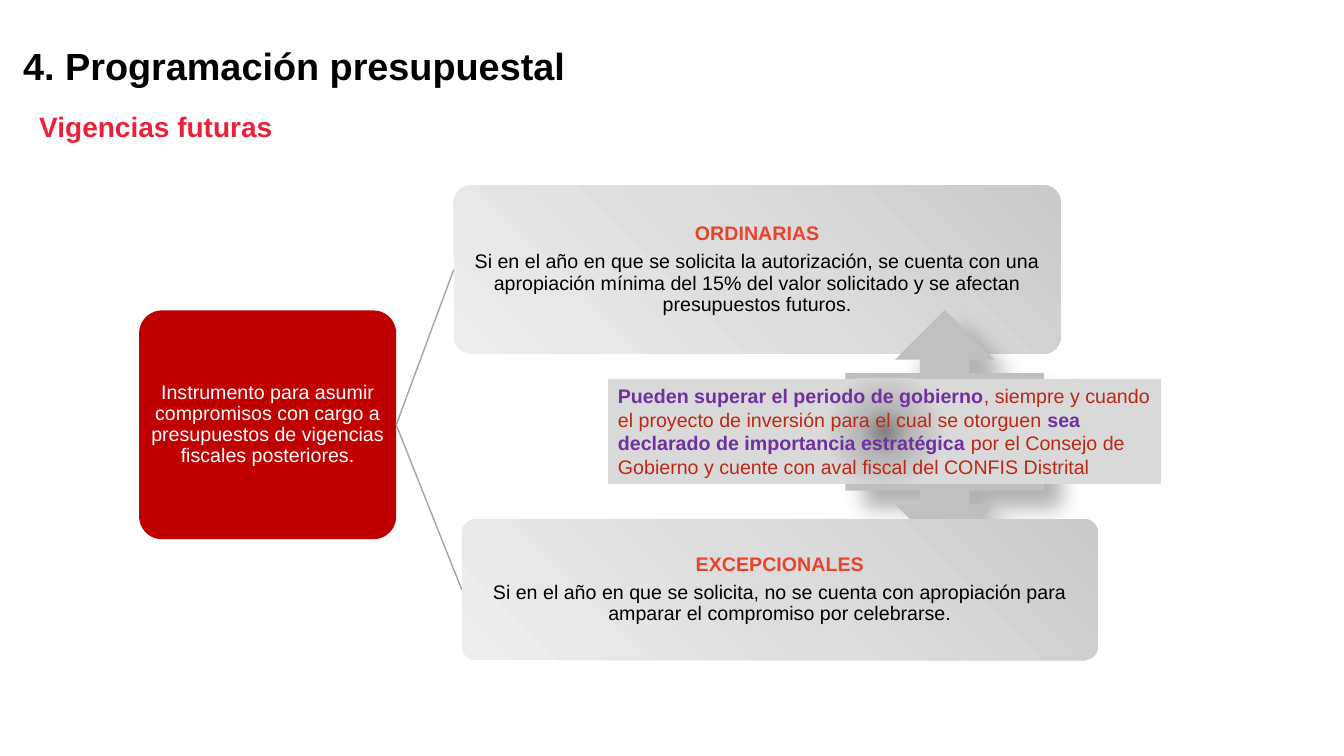
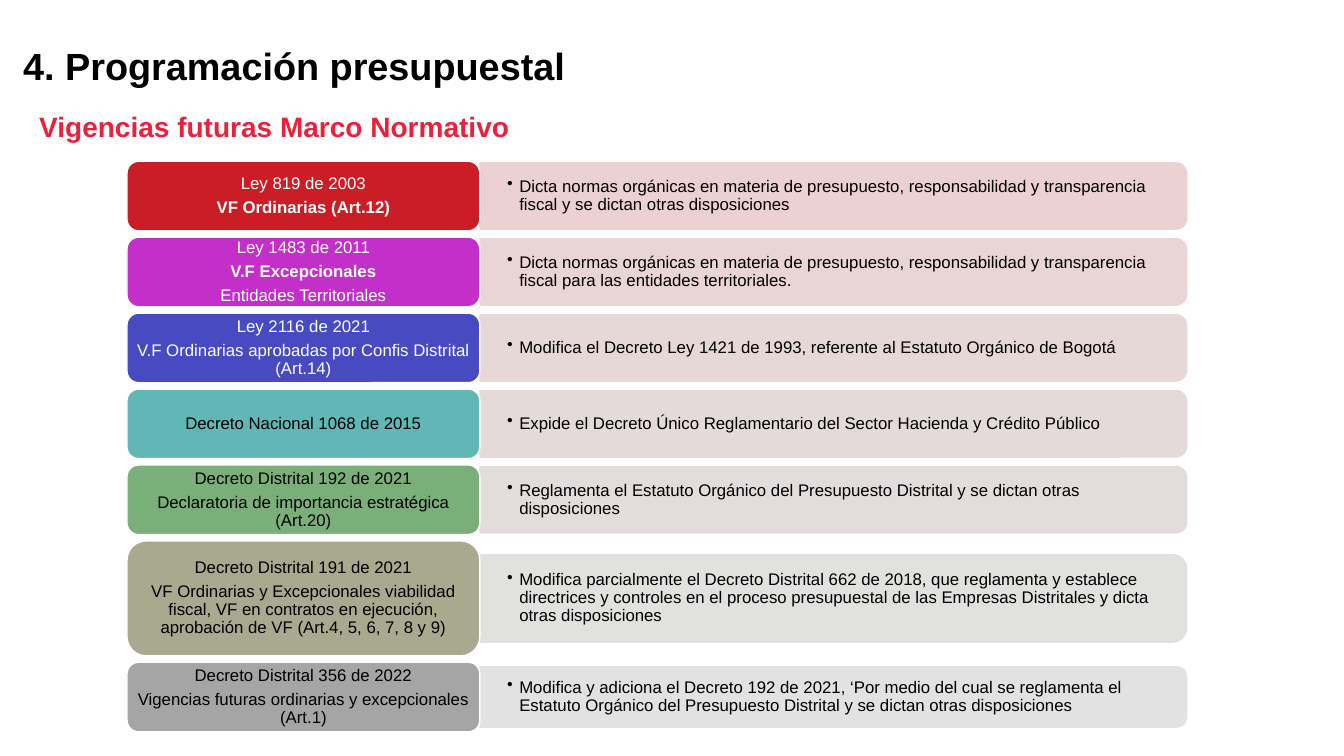
from pptx import Presentation
from pptx.dml.color import RGBColor
from pptx.enum.shapes import MSO_CONNECTOR as CONNECTOR, MSO_SHAPE as SHAPE
from pptx.enum.text import MSO_ANCHOR as ANCHOR, MSO_AUTO_SIZE as AUTO_SIZE, PP_ALIGN as ALIGN
from pptx.oxml import parse_xml
from pptx.oxml.ns import nsdecls, qn
from pptx.util import Inches, Pt

FONT = "Arial"
COLORS = {
    "black": "000000", "white": "FFFFFF", "subtitle": "EA213B",
    "definition": "C00000", "heading": "E9422D", "link": "A5A5A5",
    "callout": "BFBFBF", "purple": "7030A0", "brick": "BD2714",
}
CARD_GRADIENT = [(0, "CACACA"), (50, "DDDDDD"), (100, "EEEEEE")]
NOTE_GRADIENT = [(0, "808080"), (9, "B7B7B7"), (22, "D9D9D9")]

LAWS = [
    ("CA1D25", "EBD1D1", "white",
     [("Ley 819 de 2003", False), ("VF Ordinarias (Art.12)", True)],
     "Dicta normas orgánicas en materia de presupuesto, responsabilidad y transparencia "
     "fiscal y se dictan otras disposiciones"),
    ("C32FC9", "EAD5D5", "white",
     [("Ley 1483 de 2011", False), ("V.F Excepcionales", True),
      ("Entidades Territoriales", False)],
     "Dicta normas orgánicas en materia de presupuesto, responsabilidad y transparencia "
     "fiscal para las entidades territoriales."),
    ("474AC1", "E7D8D8", "white",
     [("Ley 2116 de 2021", False),
      ("V.F Ordinarias aprobadas por Confis Distrital (Art.14)", False)],
     "Modifica el Decreto Ley 1421 de 1993, referente al Estatuto Orgánico de Bogotá"),
    ("61B7B5", "E5DADA", "black",
     [("Decreto Nacional 1068 de 2015", False)],
     "Expide el Decreto Único Reglamentario del Sector Hacienda y Crédito Público"),
    ("7BAF7A", "E3DCDC", "black",
     [("Decreto Distrital 192 de 2021", False),
      ("Declaratoria de importancia estratégica (Art.20)", False)],
     "Reglamenta el Estatuto Orgánico del Presupuesto Distrital y se dictan otras "
     "disposiciones"),
    ("A9A990", "E1E1DF", "black",
     [("Decreto Distrital 191 de 2021", False),
      ("VF Ordinarias y Excepcionales viabilidad fiscal, VF en contratos en ejecución, "
       "aprobación de VF (Art.4, 5, 6, 7, 8 y 9)", False)],
     "Modifica parcialmente el Decreto Distrital 662 de 2018, que reglamenta y establece "
     "directrices y controles en el proceso presupuestal de las Empresas Distritales y "
     "dicta otras disposiciones"),
    ("A5A5A5", "E2E2E2", "black",
     [("Decreto Distrital 356 de 2022", False),
      ("Vigencias futuras ordinarias y excepcionales (Art.1)", False)],
     "Modifica y adiciona el Decreto 192 de 2021, ‘Por medio del cual se reglamenta el "
     "Estatuto Orgánico del Presupuesto Distrital y se dictan otras disposiciones"),
]
LABEL_HEIGHTS = [0.69] * 5 + [1.14, 0.69]
PANEL_HEIGHTS = [0.66] * 5 + [0.87, 0.6]


def rgb(color):
    return RGBColor.from_string(COLORS.get(color, color))


def add_run(paragraph, text, size, color, bold=False):
    run = paragraph.add_run()
    run.text = text
    run.font.name = FONT
    run.font.size = Pt(size)
    run.font.bold = bold
    run.font.color.rgb = rgb(color)


def set_frame(frame, anchor, inset_x=0.1, inset_y=0.05):
    frame.word_wrap = True
    frame.auto_size = AUTO_SIZE.NONE
    frame.vertical_anchor = anchor
    frame.margin_left = frame.margin_right = Inches(inset_x)
    frame.margin_top = frame.margin_bottom = Inches(inset_y)


def write_centered(shape, lines, size, gap, inset_x, inset_y):
    frame = shape.text_frame
    set_frame(frame, ANCHOR.MIDDLE, inset_x, inset_y)
    for index, (text, color, bold) in enumerate(lines):
        paragraph = frame.add_paragraph() if index else frame.paragraphs[0]
        paragraph.alignment = ALIGN.CENTER
        paragraph.line_spacing = 0.9
        paragraph.space_after = Pt(gap)
        add_run(paragraph, text, size, color, bold)


def add_block(slide, preset, box, fill, outline=None):
    block = slide.shapes.add_shape(preset, *map(Inches, box))
    block.shadow.inherit = False
    block.fill.solid()
    block.fill.fore_color.rgb = rgb(fill)
    if outline:
        block.line.color.rgb = rgb(outline)
        block.line.width = Pt(1)
    else:
        block.line.fill.background()
    return block


def set_radial_fill(shape, stops, focus):
    left, top, right, bottom = (side * 1000 for side in focus)
    stop_xml = "".join(
        f'<a:gs pos="{position * 1000}"><a:srgbClr val="{color}"/></a:gs>'
        for position, color in stops)
    gradient = parse_xml(
        f'<a:gradFill {nsdecls("a")} rotWithShape="1"><a:gsLst>{stop_xml}</a:gsLst>'
        f'<a:path path="circle"><a:fillToRect l="{left}" t="{top}" r="{right}" '
        f'b="{bottom}"/></a:path></a:gradFill>')
    properties = shape._element.spPr
    properties.replace(properties.find(qn("a:solidFill")), gradient)


def add_soft_shadow(shape):
    shape._element.spPr.find(qn("a:effectLst")).append(parse_xml(
        f'<a:outerShdw {nsdecls("a")} blurRad="{Pt(15)}" dist="{Pt(18)}" dir="2700000" '
        'algn="tl" rotWithShape="0"><a:srgbClr val="000000"><a:alpha val="30000"/>'
        '</a:srgbClr></a:outerShdw>'))


def add_link(slide, source, target):
    link = slide.shapes.add_connector(CONNECTOR.STRAIGHT, 0, 0, 0, 0)
    link.begin_connect(source, 3)
    link.end_connect(target, 1)
    link.line.color.rgb = rgb("link")
    link.line.width = Pt(1)
    link._element.spPr.append(parse_xml(f'<a:effectLst {nsdecls("a")}/>'))


def add_titled_slide(deck, subtitle):
    slide = deck.slides.add_slide(deck.slide_layouts[5])
    title = slide.shapes.title
    title.left, title.top, title.width, title.height = map(Inches, (0.13, 0.37, 8.71, 0.56))
    heading = slide.shapes.add_textbox(*map(Inches, (0.29, 1.03, 6.88, 0.44)))
    for box, text, size, color in (
            (title, "4. Programación presupuestal", 27, "black"),
            (heading, subtitle, 20, "subtitle")):
        set_frame(box.text_frame, ANCHOR.MIDDLE)
        paragraph = box.text_frame.paragraphs[0]
        paragraph.alignment = ALIGN.LEFT
        add_run(paragraph, text, size, color, True)
    return slide


def add_card(slide, box, heading, body):
    card = add_block(slide, SHAPE.ROUNDED_RECTANGLE, box, "callout")
    card.adjustments[0] = 0.1
    set_radial_fill(card, CARD_GRADIENT, (100, 0, 0, 100))
    write_centered(card, [(heading, "heading", True), (body, "black", False)],
                   14, 5, 0.01, 0.01)
    return card


def add_note(slide):
    note = add_block(slide, SHAPE.RECTANGLE, (6.03, 3.76, 5.49, 1.04), "callout")
    set_radial_fill(note, NOTE_GRADIENT, (50, 50, 50, 50))
    set_frame(note.text_frame, ANCHOR.TOP)
    paragraph = note.text_frame.paragraphs[0]
    paragraph.alignment = ALIGN.LEFT
    for text, emphasized in (
            ("Pueden superar el periodo de gobierno", True),
            (", siempre y cuando el proyecto de inversión para el cual se otorguen ", False),
            ("sea declarado de importancia estratégica", True),
            (" por el Consejo de Gobierno y cuente con aval fiscal del CONFIS Distrital",
             False)):
        add_run(paragraph, text, 14, "purple" if emphasized else "brick", emphasized)


def add_panel(slide, middle, height, color, text):
    left, width = 4.76, 7.01
    panel = add_block(slide, SHAPE.ROUND_2_SAME_RECTANGLE,
                      (left + (width - height) / 2, middle - width / 2, height, width),
                      color, color)
    panel.rotation = 90
    summary = slide.shapes.add_textbox(
        *map(Inches, (left, middle - height / 2, width - 0.03, height)))
    set_frame(summary.text_frame, ANCHOR.MIDDLE, 0.27, 0)
    paragraph = summary.text_frame.paragraphs[0]
    properties = paragraph._p.get_or_add_pPr()
    properties.set("marL", str(Inches(0.12)))
    properties.set("indent", str(-Inches(0.12)))
    properties.append(parse_xml(f'<a:buChar {nsdecls("a")} char="•"/>'))
    paragraph.line_spacing = 0.9
    paragraph.space_after = Pt(2)
    add_run(paragraph, text, 12, "black")


def build_definition_slide(deck):
    slide = add_titled_slide(deck, "Vigencias futuras")
    definition = add_block(slide, SHAPE.ROUNDED_RECTANGLE, (1.38, 3.08, 2.55, 2.27),
                           "definition")
    definition.adjustments[0] = 0.1
    write_centered(definition, [(
        "Instrumento para asumir compromisos con cargo a presupuestos de vigencias "
        "fiscales posteriores.", "white", False)], 14, 5, 0.01, 0.01)
    ordinary = add_card(
        slide, (4.5, 1.84, 6.02, 1.67), "ORDINARIAS",
        "Si en el año en que se solicita la autorización, se cuenta con una apropiación "
        "mínima del 15% del valor solicitado y se afectan presupuestos futuros.")
    arrows = add_block(slide, SHAPE.LEFT_RIGHT_ARROW_CALLOUT, (8.16, 3.3, 2.42, 1.97),
                       "callout")
    arrows.rotation = 90
    add_soft_shadow(arrows)
    exceptional = add_card(
        slide, (4.58, 5.15, 6.31, 1.4), "EXCEPCIONALES",
        "Si en el año en que se solicita, no se cuenta con apropiación para amparar el "
        "compromiso por celebrarse.")
    for card in (ordinary, exceptional):
        add_link(slide, definition, card)
    add_note(slide)


def build_framework_slide(deck):
    slide = add_titled_slide(deck, "Vigencias futuras Marco Normativo")
    top, bottom = 1.6, 7.26
    gap = (bottom - top - sum(LABEL_HEIGHTS)) / (len(LAWS) - 1)
    for law, label_height, panel_height in zip(LAWS, LABEL_HEIGHTS, PANEL_HEIGHTS):
        label_color, panel_color, text_color, lines, summary = law
        add_panel(slide, top + label_height / 2, panel_height, panel_color, summary)
        label = add_block(slide, SHAPE.ROUNDED_RECTANGLE, (1.26, top, 3.5, label_height),
                          label_color, "white")
        write_centered(label, [(text, text_color, bold) for text, bold in lines],
                       12, 4, 0.05, 0.03)
        top += label_height + gap


def main():
    deck = Presentation()
    deck.slide_width, deck.slide_height = Inches(13.33), Inches(7.5)
    build_definition_slide(deck)
    build_framework_slide(deck)
    deck.save("out.pptx")


if __name__ == "__main__":
    main()
